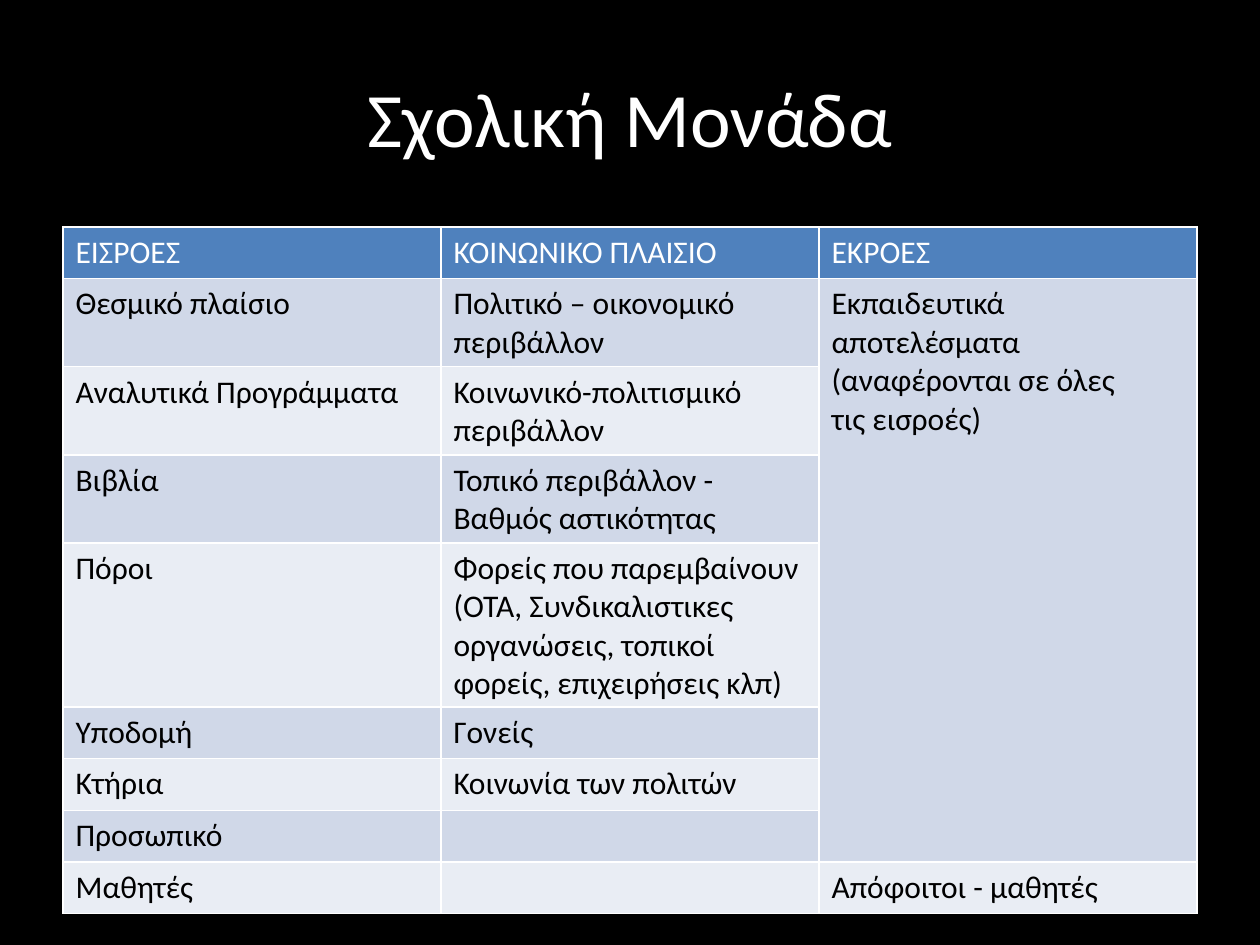
"""Build the school unit slide: a title above a table of inputs, context and outputs."""
from lxml import etree
from pptx import Presentation
from pptx import util as u
from pptx.dml.color import RGBColor
from pptx.enum import text
from pptx.oxml.ns import qn

TITLE = "Σχολική Μονάδα"
ROWS = [
    ("ΕΙΣΡΟΕΣ", "ΚΟΙΝΩΝΙΚΟ ΠΛΑΙΣΙΟ", "ΕΚΡΟΕΣ"),
    ("Θεσμικό πλαίσιο", "Πολιτικό – οικονομικό περιβάλλον",
     "Εκπαιδευτικά αποτελέσματα\n(αναφέρονται σε όλες\nτις εισροές)"),
    ("Αναλυτικά Προγράμματα", "Κοινωνικό-πολιτισμικό περιβάλλον", ""),
    ("Βιβλία", "Τοπικό περιβάλλον - Βαθμός αστικότητας", ""),
    ("Πόροι", "Φορείς που παρεμβαίνουν (ΟΤΑ, Συνδικαλιστικες οργανώσεις, "
              "τοπικοί φορείς, επιχειρήσεις κλπ)", ""),
    ("Υποδομή", "Γονείς", ""),
    ("Κτήρια", "Κοινωνία των πολιτών", ""),
    ("Προσωπικό", "", ""),
    ("Μαθητές", "", "Απόφοιτοι - μαθητές"),
]
OUTPUT_SPAN = (1, 7)

BLACK = RGBColor(0x00, 0x00, 0x00)
WHITE = RGBColor(0xFF, 0xFF, 0xFF)
HEADER = RGBColor(0x4F, 0x81, 0xBD)
BANDS = (RGBColor(0xE9, 0xED, 0xF4), RGBColor(0xD0, 0xD8, 0xE8))

WIDTH, HEIGHT = u.Inches(10), u.Inches(7.5)
LEFT, INNER = int(WIDTH * 0.05), int(WIDTH * 0.9)
ROW_HEIGHT = u.Inches(0.41)


def write(tf, content, size, color, align=None):
    for i, line in enumerate(content.split("\n")):
        p = tf.paragraphs[0] if i == 0 else tf.add_paragraph()
        p.alignment = align
        r = p.add_run()
        r.text = line
        for name, value in dict(name="Calibri", size=u.Pt(size)).items():
            setattr(r.font, name, value)
        r.font.color.rgb = color


def add_borders(cell):
    props = cell._tc.get_or_add_tcPr()
    for side in ("lnL", "lnR", "lnT", "lnB"):
        line = etree.SubElement(props, qn(f"a:{side}"), w=str(u.Pt(1)))
        fill = etree.SubElement(line, qn("a:solidFill"))
        etree.SubElement(fill, qn("a:srgbClr"), val=str(WHITE))


def add_title(s):
    sp = s.shapes.add_textbox(LEFT, int(HEIGHT * 0.04), INNER, u.Inches(1.25))
    tf = sp.text_frame
    for name, value in dict(word_wrap=True, vertical_anchor=text.MSO_ANCHOR.MIDDLE).items():
        setattr(tf, name, value)
    write(tf, TITLE, 44, WHITE, text.PP_ALIGN.CENTER)


def add_school_table(s):
    frame = s.shapes.add_table(len(ROWS), len(ROWS[0]), LEFT, int(HEIGHT * 0.24),
                               INNER, ROW_HEIGHT * len(ROWS))
    table = frame.table
    for i, row in enumerate(ROWS):
        for j, content in enumerate(row):
            cell = table.cell(i, j)
            add_borders(cell)
            cell.fill.solid()
            cell.fill.fore_color.rgb = BANDS[i % 2] if i else HEADER
            if content:
                write(cell.text_frame, content, 18, BLACK if i else WHITE)
    first, last = OUTPUT_SPAN
    table.cell(first, 2).merge(table.cell(last, 2))
    frame.height = u.Inches(5.43)


def main():
    prs = Presentation()
    prs.slide_width, prs.slide_height = WIDTH, HEIGHT
    s = prs.slides.add_slide(prs.slide_layouts[6])
    s.background.fill.solid()
    s.background.fill.fore_color.rgb = BLACK
    add_title(s)
    add_school_table(s)
    prs.save("out.pptx")


if __name__ == "__main__":
    main()
